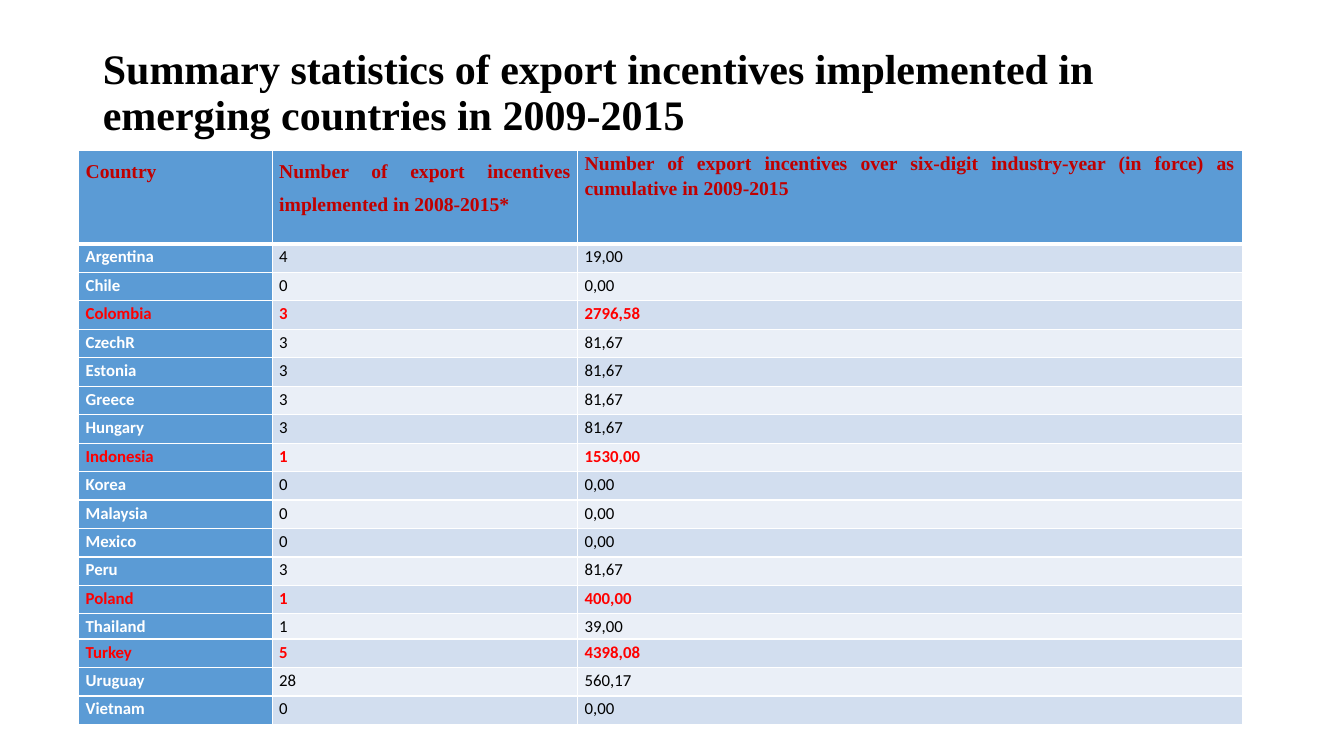
from lxml.etree import SubElement
from pptx import Presentation
from pptx.dml.color import RGBColor
from pptx.enum.text import MSO_ANCHOR, PP_ALIGN
from pptx.oxml.ns import qn
from pptx.util import Inches, Pt

# Content
TITLE = ("Summary statistics of export incentives implemented in "
         "emerging countries in 2009-2015")
HEADERS = [  # text, line spacing
    ("Country", 1.5),
    ("Number of export incentives implemented in 2008-2015*", 1.5),
    ("Number of export incentives over six-digit industry-year (in force) "
     "as cumulative in 2009-2015", 1.15),
]
COUNTRIES = [
    ("Argentina", "4", "19,00"),
    ("Chile", "0", "0,00"),
    ("Colombia", "3", "2796,58"),
    ("CzechR", "3", "81,67"),
    ("Estonia", "3", "81,67"),
    ("Greece", "3", "81,67"),
    ("Hungary", "3", "81,67"),
    ("Indonesia", "1", "1530,00"),
    ("Korea", "0", "0,00"),
    ("Malaysia", "0", "0,00"),
    ("Mexico", "0", "0,00"),
    ("Peru", "3", "81,67"),
    ("Poland", "1", "400,00"),
    ("Thailand", "1", "39,00"),
    ("Turkey", "5", "4398,08"),
    ("Uruguay", "28", "560,17"),
    ("Vietnam", "0", "0,00"),
]
HIGHLIGHTED = {"Colombia", "Indonesia", "Poland", "Turkey"}

# Colours
BLACK = RGBColor(0x00, 0x00, 0x00)
WHITE = RGBColor(0xFF, 0xFF, 0xFF)
RED = RGBColor(0xFF, 0x00, 0x00)
DARK_RED = RGBColor(0xC0, 0x00, 0x00)
BLUE = RGBColor(0x5B, 0x9B, 0xD5)
BANDS = [RGBColor(0xD2, 0xDE, 0xEF), RGBColor(0xEA, 0xEF, 0xF7)]

# Table measures in inches
LEFT, TOP, WIDTH, HEIGHT = 0.78, 1.49, 11.54, 5.7
COLUMN_WIDTHS = [1.92, 3.03, 6.59]
HEADER_HEIGHT, THAILAND_HEIGHT = 0.93, 0.25
ROW_HEIGHT = (HEIGHT - HEADER_HEIGHT - THAILAND_HEIGHT) / (len(COUNTRIES) - 1)


def write(frame, text, size=12, font="Calibri", color=BLACK, bold=False,
          spacing=1.15, align=PP_ALIGN.LEFT):
    para = frame.paragraphs[0]
    para.alignment = align
    para.line_spacing = spacing
    para.space_before = para.space_after = Pt(0)
    span = para.add_run()
    span.text = text
    span.font.size = Pt(size)
    span.font.name = font
    span.font.bold = bold
    span.font.color.rgb = color


def style_cell(cell, fill, top=1, bottom=1):
    cell.margin_left = cell.margin_right = Inches(0.07)
    cell.margin_top = cell.margin_bottom = 0
    cell.vertical_anchor = MSO_ANCHOR.TOP
    properties = cell._tc.get_or_add_tcPr()
    for side, width in (("L", 1), ("R", 1), ("T", top), ("B", bottom)):
        line = SubElement(properties, qn(f"a:ln{side}"), w=str(Pt(width)))
        solid = SubElement(line, qn("a:solidFill"))
        SubElement(solid, qn("a:srgbClr"), val=str(WHITE))
    cell.fill.solid()
    cell.fill.fore_color.rgb = fill


deck = Presentation()
deck.slide_width, deck.slide_height = Inches(13.33), Inches(7.5)
page = deck.slides.add_slide(deck.slide_layouts[5])

# Title
title = page.shapes.title
title.left, title.top = Inches(0.92), Inches(0.4)
title.width, title.height = Inches(11.5), Inches(1.45)
frame = title.text_frame
frame.word_wrap = True
frame.vertical_anchor = MSO_ANCHOR.TOP
frame.margin_top = Inches(0.08)
write(frame, TITLE, size=30, font="Times New Roman", bold=True, spacing=0.9)

# Table grid
table = page.shapes.add_table(
    len(COUNTRIES) + 1, len(HEADERS),
    Inches(LEFT), Inches(TOP), Inches(WIDTH), Inches(HEIGHT)).table
table.first_col = True
for column, width in zip(table.columns, COLUMN_WIDTHS):
    column.width = Inches(width)

# Header row
table.rows[0].height = Inches(HEADER_HEIGHT)
for c, (text, spacing) in enumerate(HEADERS):
    cell = table.cell(0, c)
    style_cell(cell, BLUE, bottom=3)
    write(cell.text_frame, text, size=14, font="Times New Roman",
          color=DARK_RED, bold=True, spacing=spacing, align=PP_ALIGN.JUSTIFY)

# Country rows
for r, values in enumerate(COUNTRIES, start=1):
    country = values[0]
    highlighted = country in HIGHLIGHTED
    table.rows[r].height = Inches(
        THAILAND_HEIGHT if country == "Thailand" else ROW_HEIGHT)
    for c, text in enumerate(values):
        cell = table.cell(r, c)
        is_name = c == 0
        style_cell(cell, BLUE if is_name else BANDS[(r - 1) % 2],
                   top=3 if r == 1 else 1)
        plain = WHITE if is_name else BLACK
        write(cell.text_frame, text, color=RED if highlighted else plain,
              bold=is_name or highlighted)

deck.save("out.pptx")
